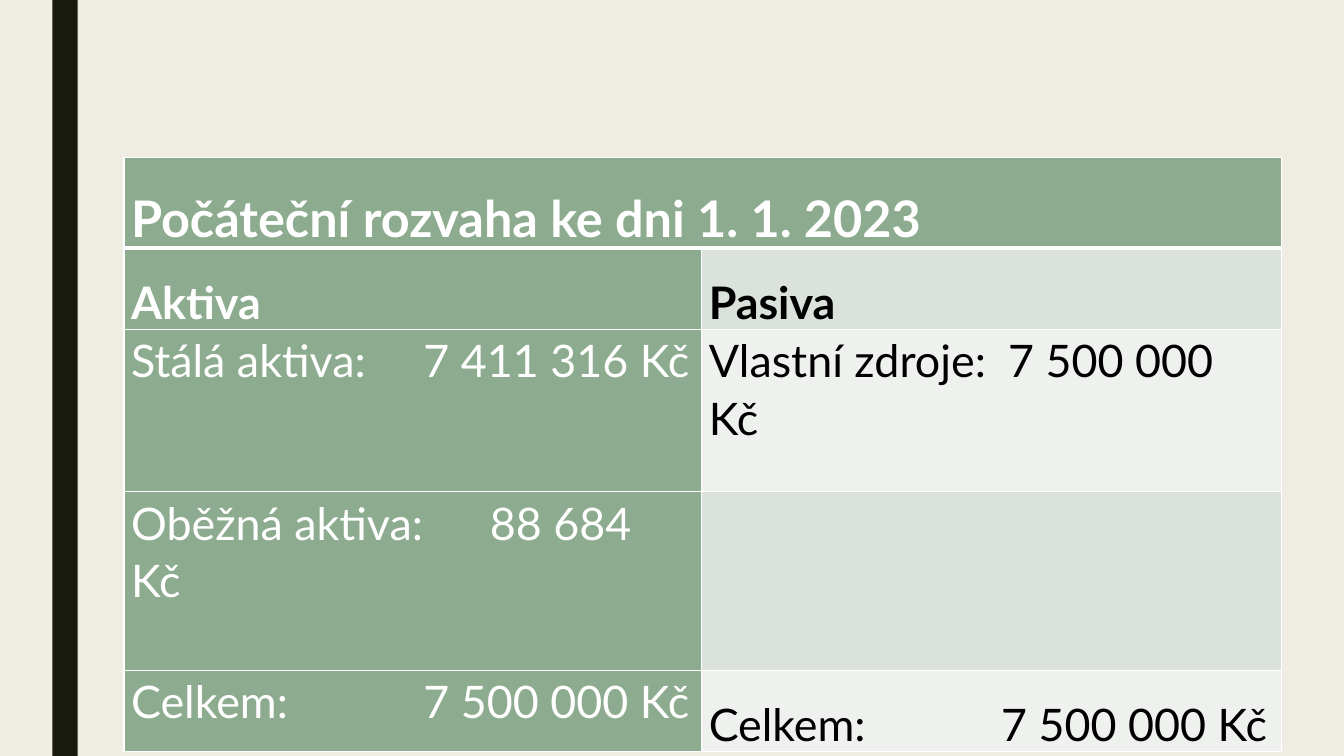
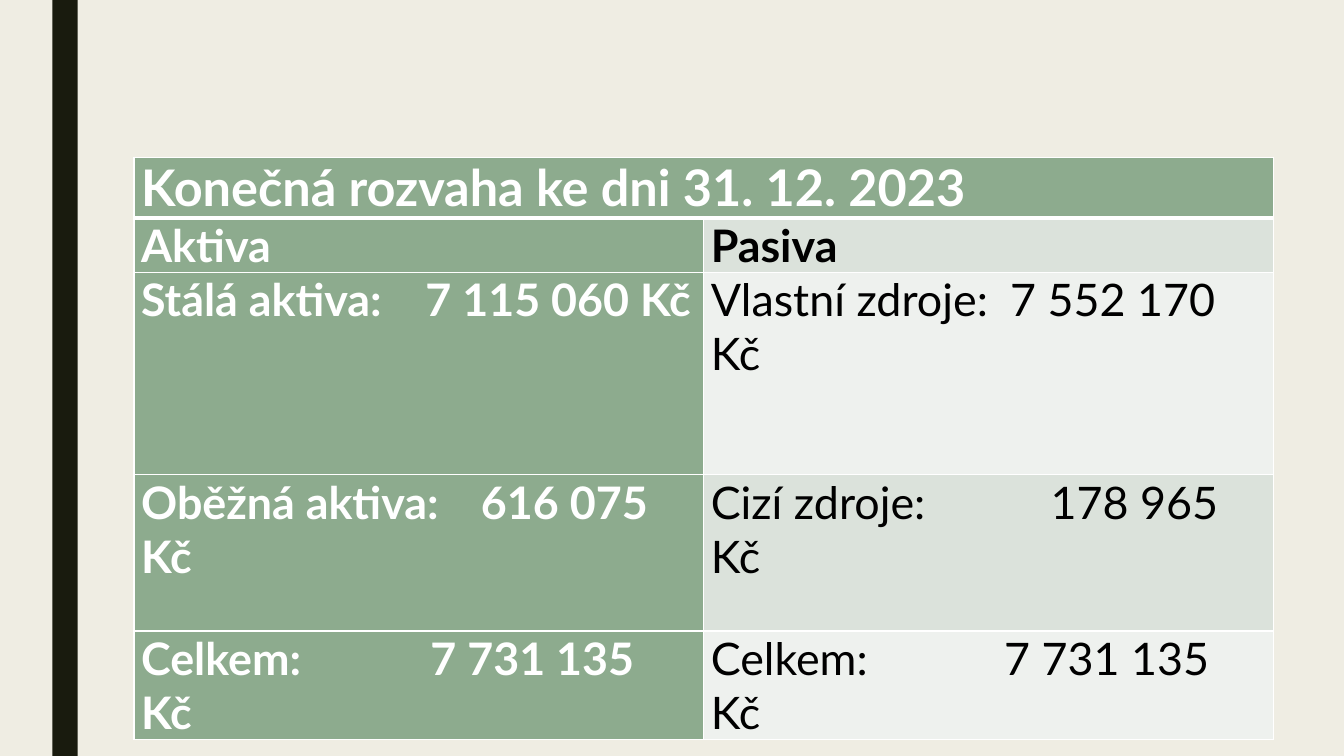
import pptx
import pptx.dml.color
import pptx.enum.shapes
import pptx.oxml
import pptx.oxml.ns
import pptx.util
from lxml import etree

Inches = pptx.util.Inches
Pt = pptx.util.Pt
RGBColor = pptx.dml.color.RGBColor

CREAM = RGBColor(0xEF, 0xED, 0xE3)
INK = RGBColor(0x19, 0x1B, 0x0E)
GREEN = RGBColor(0x8D, 0xAB, 0x8E)
SAGE = RGBColor(0xDB, 0xE2, 0xDB)
MIST = RGBColor(0xEE, 0xF1, 0xEE)
WHITE = RGBColor(0xFF, 0xFF, 0xFF)
BLACK = RGBColor(0, 0, 0)

WIDTH, HEIGHT = 13.33, 7.5
TABLE_TOP = 1.56
CELL_MARGINS = {"margin_left": Inches(0.07), "margin_right": Inches(0.07),
                "margin_top": 0, "margin_bottom": 0}
HEADING = {"name": "Lato", "size": Pt(36), "bold": True}
LABEL = {"name": "Lato", "size": Pt(32), "bold": True}
PLAIN = {"name": "Lato", "size": Pt(32), "bold": False}

# Each entry: text, position of the tab stop before the amount, line spacing.
OPENING = {
    "title": "Počáteční rozvaha ke dni 1. 1. 2023",
    "left": 1.23, "columns": (5.73, 5.75),
    "rows": (0.9, 0.81, 1.61, 1.77, 0.8),
    "heading_spacing": 1.5, "assets_font": PLAIN,
    "entries": [
        (("Stálá aktiva:\t7 411 316 Kč", 2.9, 1.07),
         ("Vlastní zdroje:\t7 500 000\vKč", 2.97, 1.07)),
        (("Oběžná aktiva:\t88 684\vKč", 3.56, 1.07), None),
        (("Celkem:\t7 500 000 Kč", 2.9, 1.07),
         ("Celkem:\t7 500 000 Kč", 2.9, 1.5)),
    ],
}
CLOSING = {
    "title": "Konečná rozvaha ke dni 31. 12. 2023",
    "left": 1.33, "columns": (5.65, 5.65),
    "rows": (0.6, 0.54, 2.01, 1.55, 1.08),
    "heading_spacing": 1.0, "assets_font": LABEL,
    "entries": [
        (("Stálá aktiva:\t7 115 060 Kč", 2.82, 1.0),
         ("Vlastní zdroje:\t7 552 170\vKč", 2.97, 1.0)),
        (("Oběžná aktiva:\t616 075\vKč", 3.37, 1.0),
         ("Cizí zdroje:\t178 965\vKč", 3.37, 1.0)),
        (("Celkem:\t7 731 135\vKč", 2.87, 1.0),
         ("Celkem:\t7 731 135\vKč", 2.91, 1.0)),
    ],
}


def apply(target, values):
    for name, value in values.items():
        setattr(target, name, value)


def add_side_bar(page):
    bar = page.shapes.add_shape(
        pptx.enum.shapes.MSO_SHAPE.RECTANGLE,
        Inches(0.52), 0, Inches(0.25), Inches(HEIGHT))
    bar.shadow.inherit = False
    bar.fill.solid()
    bar.fill.fore_color.rgb = INK
    bar.line.fill.background()


def set_borders(cell, top=1, bottom=1):
    """Draw white borders; the widths are in points."""
    properties = cell._tc.get_or_add_tcPr()
    widths = {"lnL": 1, "lnR": 1, "lnT": top, "lnB": bottom}
    for index, (side, width) in enumerate(widths.items()):
        line = pptx.oxml.parse_xml(
            f'<a:{side} {pptx.oxml.ns.nsdecls("a")} w="{Pt(width)}">'
            f'<a:solidFill><a:srgbClr val="{WHITE}"/></a:solidFill></a:{side}>')
        properties.insert(index, line)


def add_tab_stop(para, position):
    properties = para._p.get_or_add_pPr()
    stops = etree.SubElement(properties, pptx.oxml.ns.qn("a:tabLst"))
    etree.SubElement(stops, pptx.oxml.ns.qn("a:tab"),
                     pos=str(Inches(position)), algn="l")


def paint_cell(cell, fill, top=1, bottom=1):
    apply(cell, CELL_MARGINS)
    cell.fill.solid()
    cell.fill.fore_color.rgb = fill
    set_borders(cell, top, bottom)


def write_cell(cell, text, font, color, spacing, tab=None):
    para = cell.text_frame.paragraphs[0]
    para.text = text
    apply(para, {"line_spacing": spacing, "space_after": Pt(8)})
    if tab:
        add_tab_stop(para, tab)
    for span in para.runs:
        apply(span.font, font)
        span.font.color.rgb = color


def add_balance_sheet(page, sheet):
    columns, rows = sheet["columns"], sheet["rows"]
    table = page.shapes.add_table(
        len(rows), len(columns), Inches(sheet["left"]), Inches(TABLE_TOP),
        Inches(sum(columns)), Inches(sum(rows))).table
    for column, width in zip(table.columns, columns):
        column.width = Inches(width)
    for row, height in zip(table.rows, rows):
        row.height = Inches(height)

    spacing = sheet["heading_spacing"]
    title = table.cell(0, 0)
    title.merge(table.cell(0, 1))
    for column in range(len(columns)):
        paint_cell(table.cell(0, column), GREEN, bottom=3)
    write_cell(title, sheet["title"], HEADING, WHITE, spacing)

    headings = (("Aktiva", None, spacing), ("Pasiva", None, spacing))
    for row, entries in enumerate([headings] + sheet["entries"], start=1):
        fills = (GREEN, SAGE if row % 2 else MIST)
        fonts = (LABEL, LABEL) if row == 1 else (sheet["assets_font"], PLAIN)
        for column, entry in enumerate(entries):
            cell = table.cell(row, column)
            paint_cell(cell, fills[column], top=3 if row == 1 else 1)
            if entry:
                text, tab, line_spacing = entry
                write_cell(cell, text, fonts[column], (WHITE, BLACK)[column],
                           line_spacing, tab)


def main():
    deck = pptx.Presentation()
    apply(deck, {"slide_width": Inches(WIDTH), "slide_height": Inches(HEIGHT)})
    background = deck.slide_master.background.fill
    background.solid()
    background.fore_color.rgb = CREAM
    for sheet in (OPENING, CLOSING):
        page = deck.slides.add_slide(deck.slide_layouts[6])
        add_side_bar(page)
        add_balance_sheet(page, sheet)
    deck.save("out.pptx")


if __name__ == "__main__":
    main()
